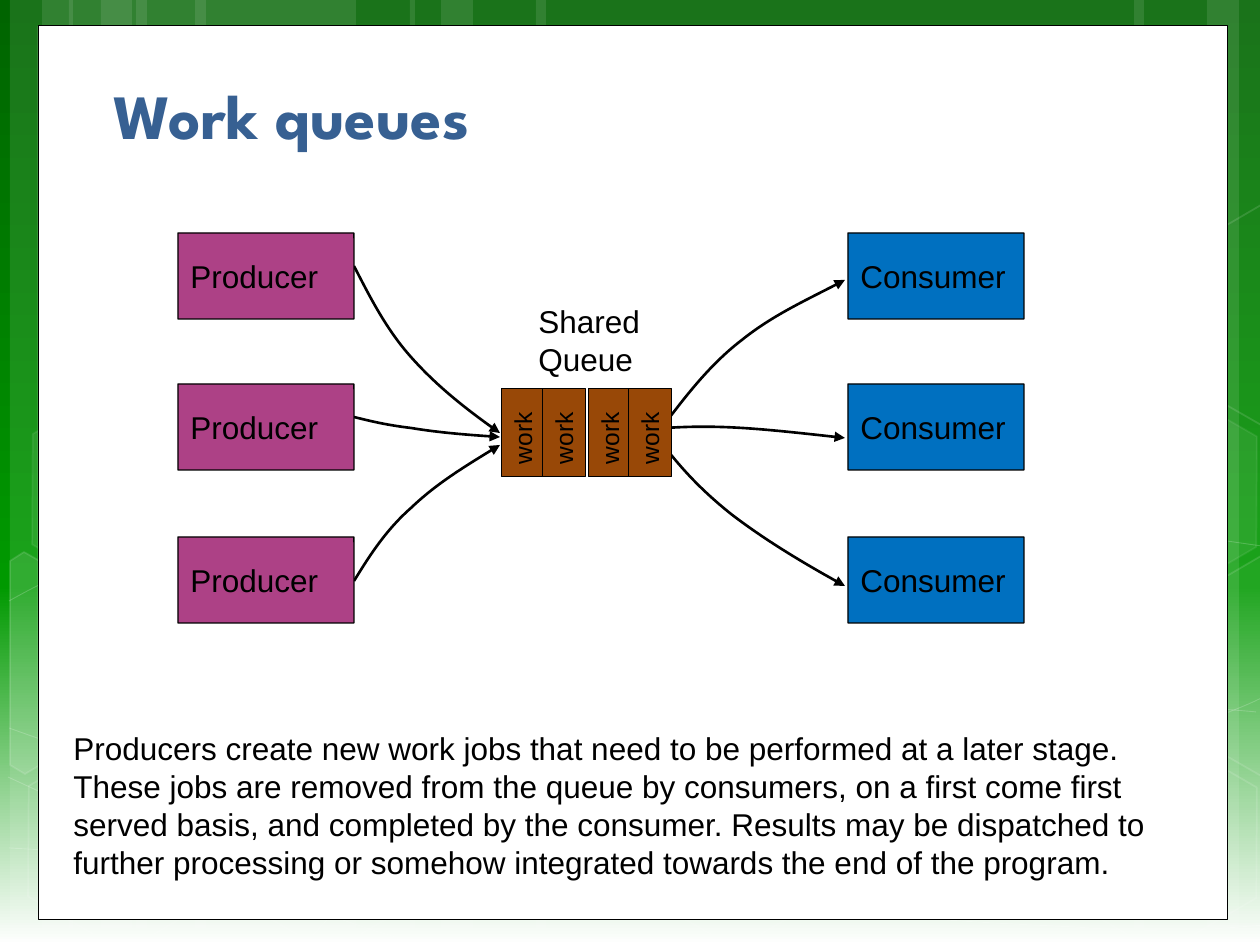
from copy import deepcopy
from dataclasses import dataclass

from lxml import etree
from pptx import Presentation
from pptx import util as u
from pptx.dml.color import RGBColor
from pptx.enum import shapes, text
from pptx.oxml.ns import qn


@dataclass(frozen=True)
class Theme:
    ink: str = "000000"
    white: str = "FFFFFF"
    title: str = "376092"
    maker: str = "AD4186"
    taker: str = "0070C0"
    job: str = "984807"
    sky: tuple = ((0, "006400"), (0.62, "009900"), (1, "FFFFFF"))
    body: str = "Arial"
    head: str = "League Spartan"
    big: int = 36
    mid: int = 18
    small: int = 14


T = Theme()
KIND = shapes.MSO_SHAPE
WIDE, HIGH = 1260, 945

# Backdrop: bands are (left, width), all of full height
BANDS = [(136, 220), (10, 63), (42, 105), (195, 220), (69, 63), (101, 105),
         (924, 220), (1207, 63), (1134, 105), (536, 388), (410, 63), (441, 105)]
# Waves: a start point, then three points for each Bezier segment
WAVES = [
    [(9, 848), (77, 852), (145, 856), (239, 854), (334, 853), (451, 851), (577, 838),
     (703, 825), (882, 801), (998, 777), (1113, 753), (1231, 716), (1269, 694)],
    [(9, 601), (45, 581), (82, 562), (152, 543), (224, 524), (326, 496), (437, 488),
     (549, 479), (685, 478), (824, 488), (963, 498), (1193, 537), (1269, 547)],
    [(8, 777), (160, 847), (311, 916), (421, 944)],
    [(9, 728), (48, 742), (88, 756), (161, 776), (234, 795), (344, 827), (450, 848),
     (554, 869), (687, 892), (791, 905), (896, 919), (1008, 924), (1075, 927),
     (1140, 932), (1158, 930), (1191, 930), (1223, 929), (1246, 926), (1269, 925)],
    [(305, 944), (328, 919), (350, 893), (381, 871), (412, 848), (454, 822), (489, 805),
     (524, 788), (546, 780), (592, 767), (638, 755), (722, 737), (766, 728),
     (811, 719), (818, 719), (857, 717), (896, 713), (958, 709), (1000, 708),
     (1044, 707), (1116, 708), (1116, 708), (1145, 708), (1173, 708), (1201, 708),
     (1223, 709), (1245, 711), (1256, 712)],
]
# Hexagons: left, top, fill opacity, line opacity
HEXES = [(626, 742, 6, 12), (14, 745, 0, 12), (18, 393, 7, 8), (219, 746, 0, 12),
         (1051, 747, 0, 12), (1051, 396, 7, 8)]
LEFT = [(10, 561), (24, 552), (121, 607), (120, 718), (25, 774), (10, 765)]
RIGHT = [(1167, 611), (1261, 556), (1271, 562), (1271, 772), (1263, 777), (1167, 722)]
CUTS = [(LEFT, 10), (RIGHT, 4), ([(x, y - 351) for x, y in RIGHT], 0)]

ARROWS = [
    [(667, 421), (689, 392), (712, 363), (742, 340), (772, 316), (809, 299), (845, 280)],
    [(354, 266), (370, 297), (386, 329), (411, 357), (435, 384), (467, 410), (500, 433)],
    [(354, 581), (370, 555), (386, 530), (411, 508), (435, 485), (467, 465), (500, 445)],
    [(354, 417), (370, 421), (386, 425), (411, 428), (435, 432), (467, 435), (500, 437)],
    [(641, 430), (664, 428), (687, 426), (721, 427), (755, 428), (800, 433), (845, 438)],
    [(664, 446), (682, 469), (701, 490), (731, 514), (761, 537), (801, 562), (845, 586)],
]
ROLES = [("Producer", 178, T.maker), ("Consumer", 848, T.taker)]
ROWS = [233, 384, 537]
JOBS = [479, 520, 566, 606]
NOTE = ("Producers create new work jobs that need to be performed at a later stage. "
        "These jobs are removed from the queue by consumers, on a first come first "
        "served basis, and completed by the consumer. Results may be dispatched to "
        "further processing or somehow integrated towards the end of the program.")


def px(n):
    return u.Emu(round(n * 914400 / 126))


def fade(node, alpha):
    """Set the opacity, in percent, of the solid colour inside node."""
    tone = next(node.iter(qn("a:srgbClr")))
    etree.SubElement(tone, qn("a:alpha")).set("val", str(alpha * 1000))


def paint(shape, fill=None, line=None, width=1, dim=0, thin=0):
    """Fill and outline a shape; dim and thin are opacities, 0 for solid."""
    shape.shadow.inherit = False
    if fill:
        shape.fill.solid()
        shape.fill.fore_color.rgb = RGBColor.from_string(fill)
        if dim:
            fade(shape.fill._xPr.find(qn("a:solidFill")), dim)
    else:
        shape.fill.background()
    if line:
        shape.line.color.rgb = RGBColor.from_string(line)
        shape.line.width = u.Pt(width)
        if thin:
            fade(shape.line._ln, thin)
    else:
        shape.line.fill.background()


def block(kind, *box):
    return slide.shapes.add_shape(kind, *map(px, box))


def trace(pts, close=False):
    pen = slide.shapes.build_freeform(*map(px, pts[0]))
    pen.add_line_segments([tuple(map(px, p)) for p in pts[1:]], close=close)
    return pen.convert_to_shape()


def curve(pts):
    """Trace the points, then join each three segments into one Bezier."""
    shape = trace(pts)
    route = next(shape._element.iter(qn("a:path")))
    legs = route.findall(qn("a:lnTo"))
    for i in range(0, len(legs), 3):
        bend = etree.SubElement(route, qn("a:cubicBezTo"))
        for leg in legs[i:i + 3]:
            bend.append(leg[0])
            route.remove(leg)
    return shape


def write(shape, lines, size=T.mid, font=T.body, color=T.ink, bold=False,
          wrap=True, anchor=text.MSO_ANCHOR.TOP):
    frame = shape.text_frame
    frame.word_wrap = wrap
    frame.vertical_anchor = anchor
    for i, line in enumerate(lines):
        para = frame.add_paragraph() if i else frame.paragraphs[0]
        para.alignment = text.PP_ALIGN.LEFT
        run = para.add_run()
        run.text = line
        run.font.size, run.font.name, run.font.bold = u.Pt(size), font, bold
        run.font.color.rgb = RGBColor.from_string(color)


def label(box, lines, **look):
    write(slide.shapes.add_textbox(*map(px, box)), lines, **look)


def backdrop():
    fill = slide.background.fill
    fill.gradient()
    fill.gradient_angle = 270
    stops = next(slide.background._cSld.iter(qn("a:gsLst")))
    stops.append(deepcopy(stops[0]))
    for stop, (pos, color) in zip(fill.gradient_stops, T.sky):
        stop.position = pos
        stop.color.rgb = RGBColor.from_string(color)
    for x, w in BANDS:
        paint(block(KIND.RECTANGLE, x, 0, w, HIGH), T.white, dim=10)
    for pts in WAVES:
        paint(curve(pts), line=T.white, width=0.5, thin=20)
    for x, y, dim, thin in HEXES:
        hexa = block(KIND.HEXAGON, x, y, 220, 192)
        hexa.adjustments[0] = 0.285
        hexa.rotation = 30
        paint(hexa, T.white if dim else None, T.white, 1, dim, thin)
    for pts, dim in CUTS:
        paint(trace(pts, True), T.white if dim else None, T.white, 1, dim, 12)
    paint(block(KIND.RECTANGLE, 38, 26, 1189, 894), T.white, T.ink, 0.5)


def diagram():
    for pts in ARROWS:
        arrow = curve(pts)
        paint(arrow, line=T.ink, width=1.5)
        etree.SubElement(arrow.line._ln, qn("a:tailEnd")).set("type", "triangle")
    for name, x, color in ROLES:
        for y in ROWS:
            box = block(KIND.ROUNDED_RECTANGLE, x, y, 176, 86)
            box.adjustments[0] = 0.003
            paint(box, color, T.ink, 0.75)
            write(box, [name], wrap=False, anchor=text.MSO_ANCHOR.MIDDLE)
    for x in JOBS:
        job = block(KIND.RECTANGLE, x, 411, 88, 43)
        job.rotation = 270
        paint(job, T.job, T.ink, 0.75)
        write(job, ["work"], size=T.small)


deck = Presentation()
deck.slide_width, deck.slide_height = px(WIDE), px(HIGH)
slide = deck.slides.add_slide(deck.slide_layouts[6])
backdrop()
label((101, 62, 1061, 96), ["Work queues"], size=T.big, font=T.head, color=T.title,
      bold=True, anchor=text.MSO_ANCHOR.BOTTOM)
diagram()
label((526, 296, 130, 89), ["Shared", "Queue"], wrap=False)
label((61, 723, 1142, 165), [NOTE])
deck.save("out.pptx")
